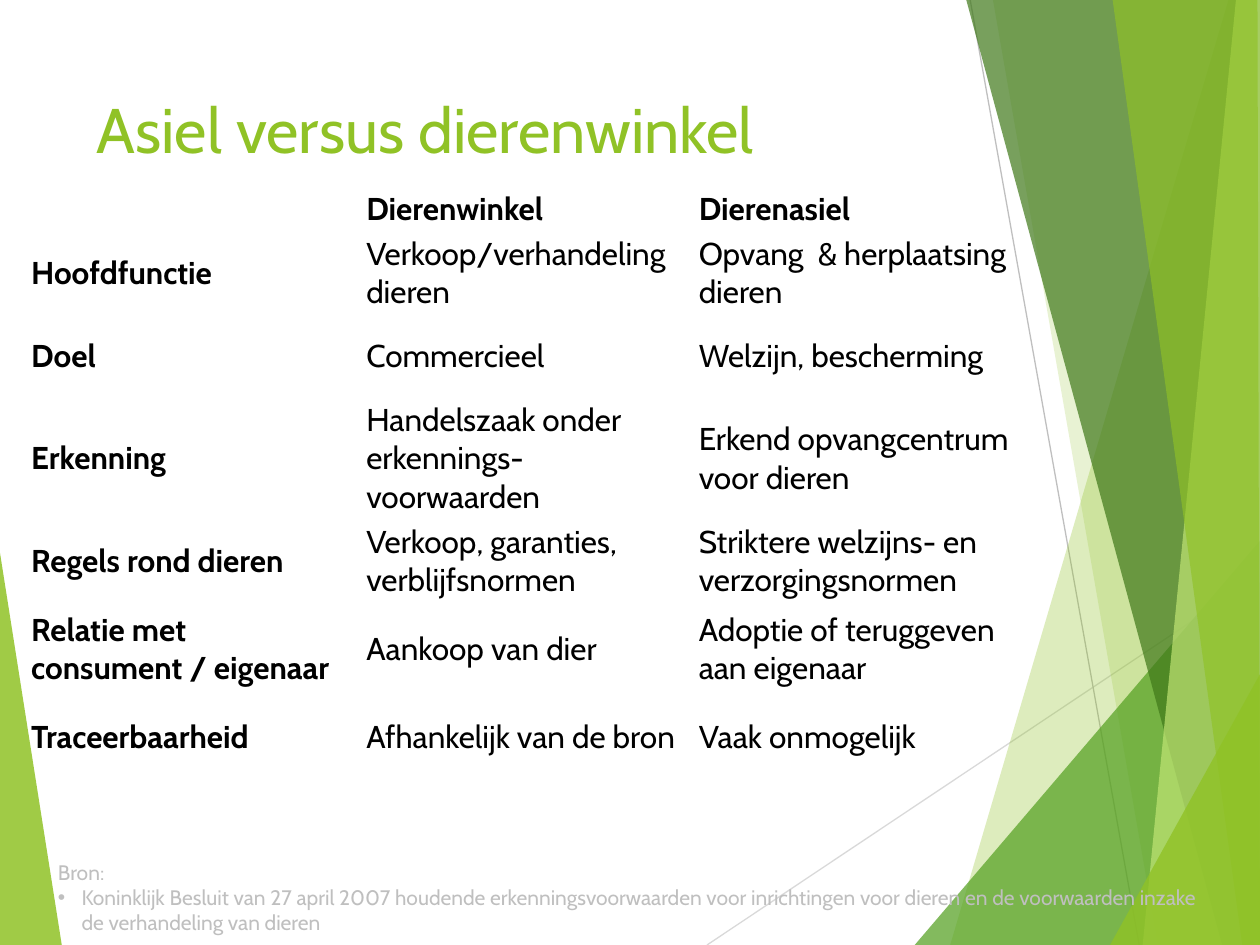
from lxml.etree import SubElement
from pptx import Presentation
from pptx.dml.color import RGBColor
from pptx.enum.shapes import MSO_CONNECTOR
from pptx.enum.text import MSO_ANCHOR, PP_ALIGN
from pptx.oxml.ns import qn
from pptx.util import Pt

# Content
TITLE = "Asiel versus dierenwinkel"
ROWS = [
    ("", "Dierenwinkel", "Dierenasiel"),
    ("Hoofdfunctie", "Verkoop/verhandeling dieren", "Opvang  & herplaatsing dieren"),
    ("Doel", "Commercieel", "Welzijn, bescherming"),
    ("Erkenning", "Handelszaak onder erkennings-voorwaarden",
     "Erkend opvangcentrum voor dieren"),
    ("Regels rond dieren", "Verkoop, garanties, verblijfsnormen",
     "Striktere welzijns- en verzorgingsnormen"),
    ("Relatie met consument / eigenaar", "Aankoop van dier",
     "Adoptie of teruggeven aan eigenaar"),
    ("Traceerbaarheid", "Afhankelijk van de bron", "Vaak onmogelijk"),
]
SOURCE_HEADING = "Bron:"
SOURCES = [
    "Koninklijk Besluit van 27 april 2007 houdende erkenningsvoorwaarden voor "
    "inrichtingen voor dieren en de voorwaarden inzake de verhandeling van dieren",
]

# Look
FONT = "Cabin"
LIME = RGBColor(0x90, 0xC2, 0x26)
GREEN = RGBColor(0x54, 0xA0, 0x21)
DARK_GREEN = RGBColor(0x3F, 0x78, 0x19)
PALE_LIME = RGBColor(0xC0, 0xE4, 0x74)
BLACK = RGBColor(0, 0, 0)
GREY = RGBColor(0xBF, 0xBF, 0xBF)
LIGHT_GREY = RGBColor(0xD9, 0xD9, 0xD9)
WIDTH, HEIGHT = 720, 540
COLUMN_WIDTHS = (191.5, 190, 190)
ROW_HEIGHTS = (28.8, 28.8, 50.4, 28.8, 50.4, 50.4, 50.4)
PLAIN_TABLE_STYLE = "{2D5ABB26-0587-4C30-8999-92F81FD0307C}"

# Background: facets as (colour, opacity %, corners), lines as (colour, from, to)
LEFT_FACET = (LIME, 85, [(0, 316), (35.3, HEIGHT), (0, HEIGHT)])
LINES = [
    (LIGHT_GREY, (404, HEIGHT), (WIDTH, 329)),
    (GREY, (554.4, 0), (651, HEIGHT)),
]
RIGHT_FACETS = [
    (LIME, 30, [(702, 0), (543, HEIGHT), (WIDTH, HEIGHT), (WIDTH, 0)]),
    (LIME, 20, [(567.4, 0), (661.7, HEIGHT), (WIDTH, HEIGHT), (WIDTH, 0)]),
    (GREEN, 72, [(522.7, HEIGHT), (WIDTH, 309), (WIDTH, HEIGHT)]),
    (DARK_GREEN, 70, [(552.2, 0), (698.4, HEIGHT), (WIDTH, HEIGHT), (WIDTH, 0)]),
    (PALE_LIME, 70, [(706.3, 0), (653, HEIGHT), (WIDTH, HEIGHT), (WIDTH, 0)]),
    (LIME, 65, [(635.8, 0), (709.9, HEIGHT), (WIDTH, HEIGHT), (718.6, 0)]),
    (LIME, 80, [(634.3, HEIGHT), (WIDTH, 385.2), (WIDTH, HEIGHT)]),
]


def set_font(para, size, color, bold=False):
    font = para.font
    font.name, font.size, font.bold = FONT, Pt(size), bold
    font.color.rgb = color


def add_facet(page, color, opacity, corners):
    start, *rest = [(Pt(x), Pt(y)) for x, y in corners]
    builder = page.shapes.build_freeform(*start)
    builder.add_line_segments(rest, close=True)
    facet = builder.convert_to_shape()
    facet.shadow.inherit = False
    facet.fill.solid()
    facet.fill.fore_color.rgb = color
    facet.line.fill.background()
    swatch = facet._element.spPr.find(qn("a:solidFill")).find(qn("a:srgbClr"))
    SubElement(swatch, qn("a:alpha"), val=str(opacity * 1000))


def add_line(page, color, start, end):
    line = page.shapes.add_connector(
        MSO_CONNECTOR.STRAIGHT, *[Pt(value) for value in start + end])
    line.line.color.rgb = color
    line.line.width = Pt(0.75)
    SubElement(line._element.spPr, qn("a:effectLst"))


def place_title(page):
    title = page.shapes.title
    title.left, title.top, title.width, title.height = Pt(48), Pt(48), Pt(500), Pt(104)
    frame = title.text_frame
    frame.text = TITLE
    frame.vertical_anchor = MSO_ANCHOR.TOP
    frame.paragraphs[0].alignment = PP_ALIGN.LEFT
    set_font(frame.paragraphs[0], 36, LIME)
    page.shapes._spTree.append(title._element)  # in front of the facets


def add_comparison(page):
    table = page.shapes.add_table(
        len(ROWS), len(COLUMN_WIDTHS), Pt(17.1), Pt(104.5),
        Pt(sum(COLUMN_WIDTHS)), Pt(sum(ROW_HEIGHTS))).table
    table.horz_banding = False
    table._tbl.tblPr.find(qn("a:tableStyleId")).text = PLAIN_TABLE_STYLE
    for column, width in zip(table.columns, COLUMN_WIDTHS):
        column.width = Pt(width)
    for row, height in zip(table.rows, ROW_HEIGHTS):
        row.height = Pt(height)
    for r, texts in enumerate(ROWS):
        for c, text in enumerate(texts):
            cell = table.cell(r, c)
            cell.text = text
            cell.fill.background()
            cell.vertical_anchor = MSO_ANCHOR.MIDDLE
            cell.margin_left = cell.margin_right = cell.margin_top = Pt(0.75)
            cell.margin_bottom = 0
            set_font(cell.text_frame.paragraphs[0], 18, BLACK, bold=r == 0 or c == 0)


def add_sources(page):
    box = page.shapes.add_textbox(Pt(26), Pt(487.5), Pt(669), Pt(51))
    frame = box.text_frame
    frame.word_wrap = True
    frame.text = SOURCE_HEADING
    set_font(frame.paragraphs[0], 12, GREY)
    for source in SOURCES:
        para = frame.add_paragraph()
        para.text = source
        props = para._p.get_or_add_pPr()
        props.set("marL", str(Pt(13.5)))
        props.set("indent", str(-Pt(13.5)))
        SubElement(props, qn("a:buFont"), typeface="Arial")
        SubElement(props, qn("a:buChar"), char="•")
        set_font(para, 12, GREY)


def main():
    deck = Presentation()
    deck.slide_width, deck.slide_height = Pt(WIDTH), Pt(HEIGHT)
    page = deck.slides.add_slide(deck.slide_layouts[5])
    add_facet(page, *LEFT_FACET)
    for line in LINES:
        add_line(page, *line)
    for facet in RIGHT_FACETS:
        add_facet(page, *facet)
    place_title(page)
    add_comparison(page)
    add_sources(page)
    deck.save("out.pptx")


if __name__ == "__main__":
    main()
